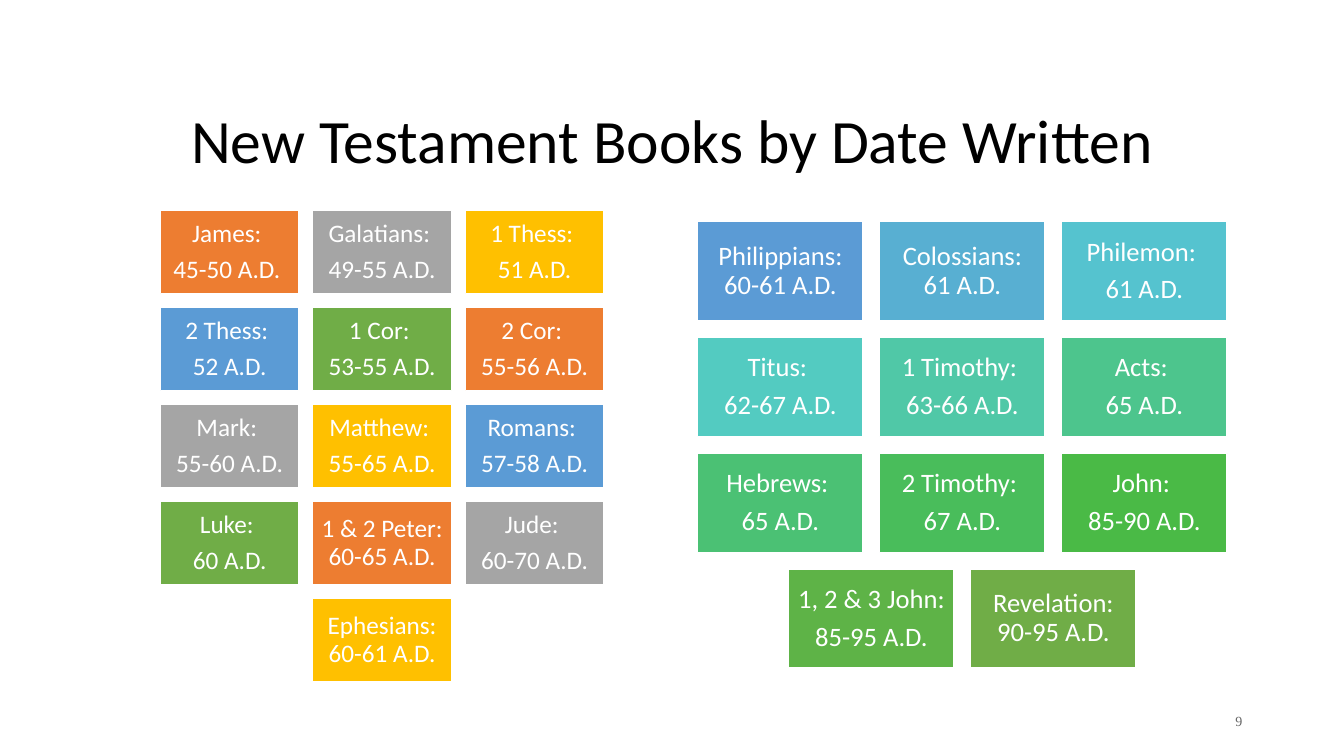
"""Build a slide of New Testament books in two grids ordered by date written."""
from pptx import Presentation
from pptx.dml.color import RGBColor
from pptx.enum.shapes import MSO_SHAPE
from pptx.enum.text import MSO_ANCHOR, PP_ALIGN
from pptx.util import Inches, Pt

COLORS = {
    "white": "FFFFFF",
    "title": "000000",
    "number": "666666",
    "cycle": ["ED7D31", "A5A5A5", "FFC000", "5B9BD5", "70AD47"],
    "blue to green": ["5B9BD5", "58AFD2", "55C3CF", "53CBC1", "50C8A7", "4DC58D",
                      "4BC174", "49BD5B", "4ABA46", "5EB347", "70AD47"],
}
COLUMNS = 3
EARLY_BOOKS = [
    "James: \n45-50 A.D. ", "Galatians: \n49-55 A.D.", "1 Thess: \n51 A.D.",
    "2 Thess: \n52 A.D.", "1 Cor: \n53-55 A.D.", "2 Cor: \n55-56 A.D.",
    "Mark: \n55-60 A.D.", "Matthew: \n55-65 A.D.", "Romans: \n57-58 A.D.",
    "Luke: \n60 A.D.", "1 & 2 Peter: 60-65 A.D.", "Jude: \n60-70 A.D.",
    "Ephesians: 60-61 A.D.",
]
LATE_BOOKS = [
    "Philippians: 60-61 A.D.", "Colossians: 61 A.D.", "Philemon: \n61 A.D.",
    "Titus: \n62-67 A.D.", "1 Timothy: \n63-66 A.D.", "Acts: \n65 A.D.",
    "Hebrews: \n65 A.D.", "2 Timothy: \n67 A.D.", "John: \n85-90 A.D.",
    "1, 2 & 3 John: \n85-95 A.D.", "Revelation: 90-95 A.D.",
]
GRIDS = [
    (EARLY_BOOKS, COLORS["cycle"], 1.59, 2.09, 4.4, 18),
    (LATE_BOOKS, COLORS["blue to green"], 6.92, 2.2, 5.25, 19),
]


def write(box, text, size, color, align, font="Calibri", spacing=0.9, after=0):
    frame = box.text_frame
    frame.word_wrap = True
    frame.vertical_anchor = MSO_ANCHOR.MIDDLE
    frame.text = text
    for para in frame.paragraphs:
        para.alignment = align
        para.line_spacing = spacing
        para.space_after = Pt(after)
        for span in para.runs:
            span.font.name = font
            span.font.size = Pt(size)
            span.font.color.rgb = RGBColor.from_string(color)


deck = Presentation()
deck.slide_width = Inches(13.33)
deck.slide_height = Inches(7.5)
page = deck.slides.add_slide(deck.slide_layouts[6])

title = page.shapes.add_textbox(Inches(1.17), Inches(1), Inches(11), Inches(0.84))
write(title, "New Testament Books by Date Written", 44, COLORS["title"], PP_ALIGN.CENTER)

for books, fills, left, top, grid_width, size in GRIDS:
    width = grid_width / (COLUMNS + 0.1 * (COLUMNS - 1))
    height = 0.6 * width
    gap = 0.1 * width
    for index, book in enumerate(books):
        row, column = divmod(index, COLUMNS)
        in_row = min(COLUMNS, len(books) - row * COLUMNS)
        column += (COLUMNS - in_row) / 2
        box = page.shapes.add_shape(
            MSO_SHAPE.RECTANGLE,
            Inches(left + column * (width + gap)), Inches(top + row * (height + gap)),
            Inches(width), Inches(height))
        box.shadow.inherit = False
        box.fill.solid()
        box.fill.fore_color.rgb = RGBColor.from_string(fills[index % len(fills)])
        box.line.color.rgb = RGBColor.from_string(COLORS["white"])
        box.line.width = Pt(1)
        frame = box.text_frame
        frame.margin_left = frame.margin_right = Inches(0.05 * width)
        frame.margin_top = frame.margin_bottom = Inches(0.05 * width)
        write(box, book, size, COLORS["white"], PP_ALIGN.CENTER, after=size / 3)

number = page.shapes.add_textbox(Inches(9.42), Inches(6.95), Inches(3), Inches(0.4))
write(number, "9", 10, COLORS["number"], PP_ALIGN.RIGHT, font="Times New Roman", spacing=1.0)

deck.save("out.pptx")
